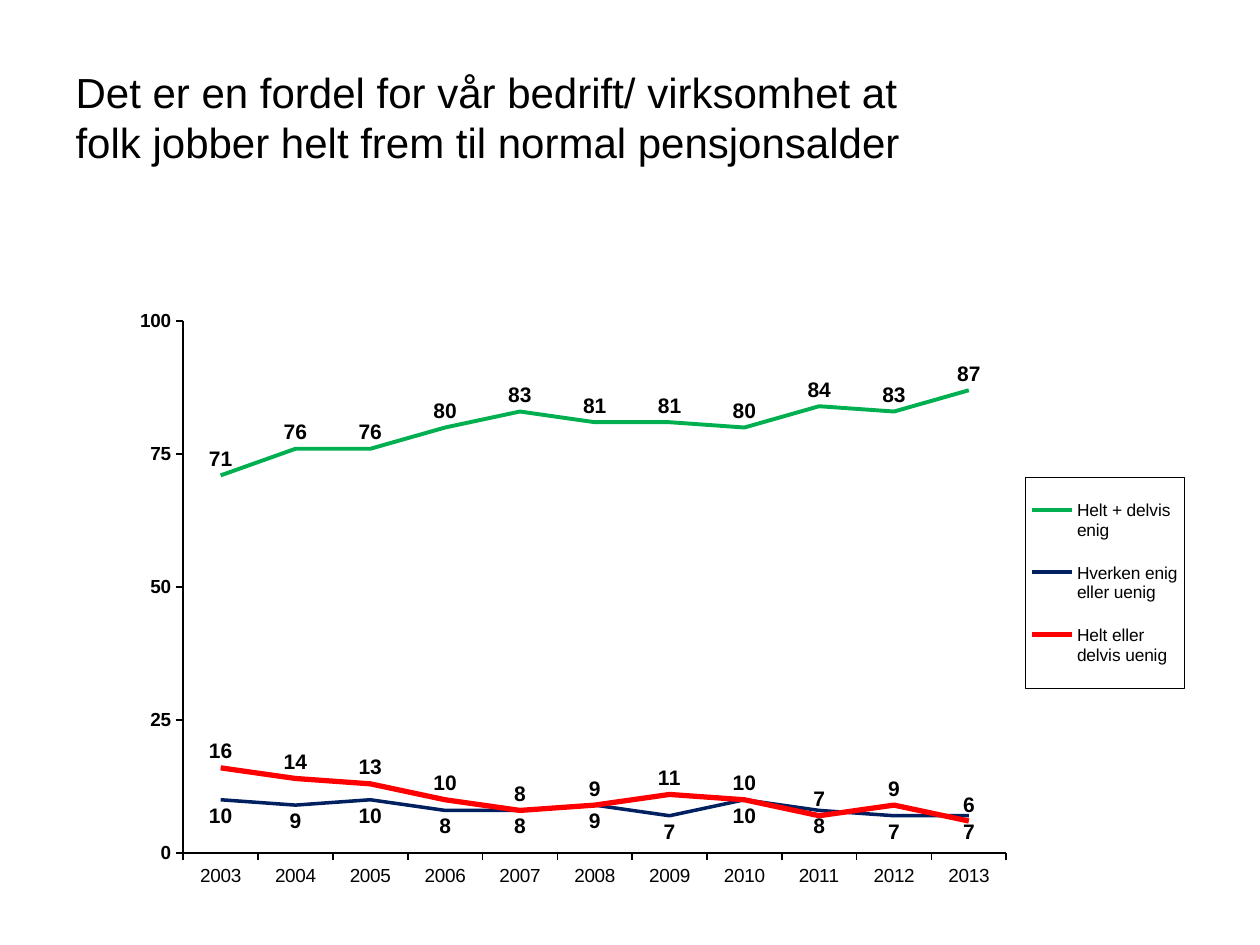
"""Build a slide with a line chart of employer attitudes to working until pension age."""
import pptx
import pptx.chart.data
import pptx.dml.color
import pptx.enum.chart
import pptx.enum.text
import pptx.oxml
import pptx.oxml.ns
import pptx.util

Pt = pptx.util.Pt
ec = pptx.enum.chart
qn = pptx.oxml.ns.qn


def rgb(value):
    return pptx.dml.color.RGBColor.from_string(value)


def place(parent, index, x, y, w, h, target=""):
    for old in parent.findall(qn("c:layout")):
        parent.remove(old)
    modes = '<c:xMode val="edge"/><c:yMode val="edge"/>'
    parent.insert(index, pptx.oxml.parse_xml(
        f'<c:layout {pptx.oxml.ns.nsdecls("c")}><c:manualLayout>{target}{modes}'
        f'<c:x val="{x}"/><c:y val="{y}"/><c:w val="{w}"/><c:h val="{h}"/>'
        '</c:manualLayout></c:layout>'))


prs = pptx.Presentation()
prs.slide_width, prs.slide_height = Pt(720), Pt(540)
s = prs.slides.add_slide(prs.slide_layouts[5])

title = s.shapes.title
title.left, title.top, title.width, title.height = Pt(36), Pt(21.6), Pt(504), Pt(90)
tf = title.text_frame
tf.text = "Det er en fordel for vår bedrift/ virksomhet at folk jobber helt frem til normal pensjonsalder"
tf.word_wrap = True
tf.vertical_anchor = pptx.enum.text.MSO_ANCHOR.MIDDLE
p = tf.paragraphs[0]
p.alignment = pptx.enum.text.PP_ALIGN.LEFT
r = p.runs[0]
r.font.name, r.font.size = "Arial", Pt(24)
r.font.color.rgb = rgb("000000")

above, below = ec.XL_LABEL_POSITION.ABOVE, ec.XL_LABEL_POSITION.BELOW
series = [
    ("Helt + delvis enig", [71, 76, 76, 80, 83, 81, 81, 80, 84, 83, 87], "00B050", 2.25, above),
    ("Hverken enig eller uenig", [10, 9, 10, 8, 8, 9, 7, 10, 8, 7, 7], "002060", 2, below),
    ("Helt eller delvis uenig", [16, 14, 13, 10, 8, 9, 11, 10, 7, 9, 6], "FF0000", 3, above),
]
data = pptx.chart.data.CategoryChartData()
data.categories = [str(year) for year in range(2003, 2014)]
for name, values, *_ in series:
    data.add_series(name, values)
chart = s.shapes.add_chart(ec.XL_CHART_TYPE.LINE, Pt(43.2), Pt(174.2), Pt(640.8), Pt(334), data).chart
chart.has_title = False
chart.font.name, chart.font.size = "Arial", Pt(10.8)
chart.font.color.rgb = rgb("000000")
plot = chart.plots[0]
plot.vary_by_categories = False

for ser, (_, _, color, width, position) in zip(plot.series, series):
    ser.smooth = False
    ser.marker.style = ec.XL_MARKER_STYLE.NONE
    ser.format.line.color.rgb = rgb(color)
    ser.format.line.width = Pt(width)
    labels = ser.data_labels
    labels.show_value = True
    labels.position = position
    labels.number_format, labels.number_format_is_linked = "0", False
    labels.font.name, labels.font.size, labels.font.bold = "Arial", Pt(12), True
    labels.font.color.rgb = rgb("000000")

for axis in (chart.category_axis, chart.value_axis):
    axis.has_major_gridlines = False
    axis.major_tick_mark = ec.XL_TICK_MARK.OUTSIDE
    axis.minor_tick_mark = ec.XL_TICK_MARK.NONE
    axis.format.line.color.rgb = rgb("000000")
    axis.format.line.width = Pt(0.9)
    axis.tick_labels.font.name, axis.tick_labels.font.size = "Arial", Pt(10.8)
    axis.tick_labels.font.color.rgb = rgb("000000")
axis = chart.value_axis
axis.minimum_scale, axis.maximum_scale, axis.major_unit = 0, 100, 25
axis.tick_labels.font.bold = True
axis.tick_labels.number_format, axis.tick_labels.number_format_is_linked = "General", False

chart.has_legend = True
legend = chart.legend
legend.position = ec.XL_LEGEND_POSITION.RIGHT
legend.include_in_layout = False
legend.font.name, legend.font.size = "Arial", Pt(9.9)
legend.font.color.rgb = rgb("000000")

c = chart.element.find(qn("c:chart"))
place(c.find(qn("c:plotArea")), 0, 0.096, 0.028, 0.734, 0.91, '<c:layoutTarget val="inner"/>')
box = c.find(qn("c:legend"))
place(box, 1, 0.847, 0.296, 0.142, 0.361)
box.find(qn("c:txPr")).addprevious(pptx.oxml.parse_xml(
    f'<c:spPr {pptx.oxml.ns.nsdecls("c", "a")}><a:noFill/><a:ln w="9525"><a:solidFill>'
    '<a:srgbClr val="000000"/></a:solidFill></a:ln></c:spPr>'))

prs.save("out.pptx")
